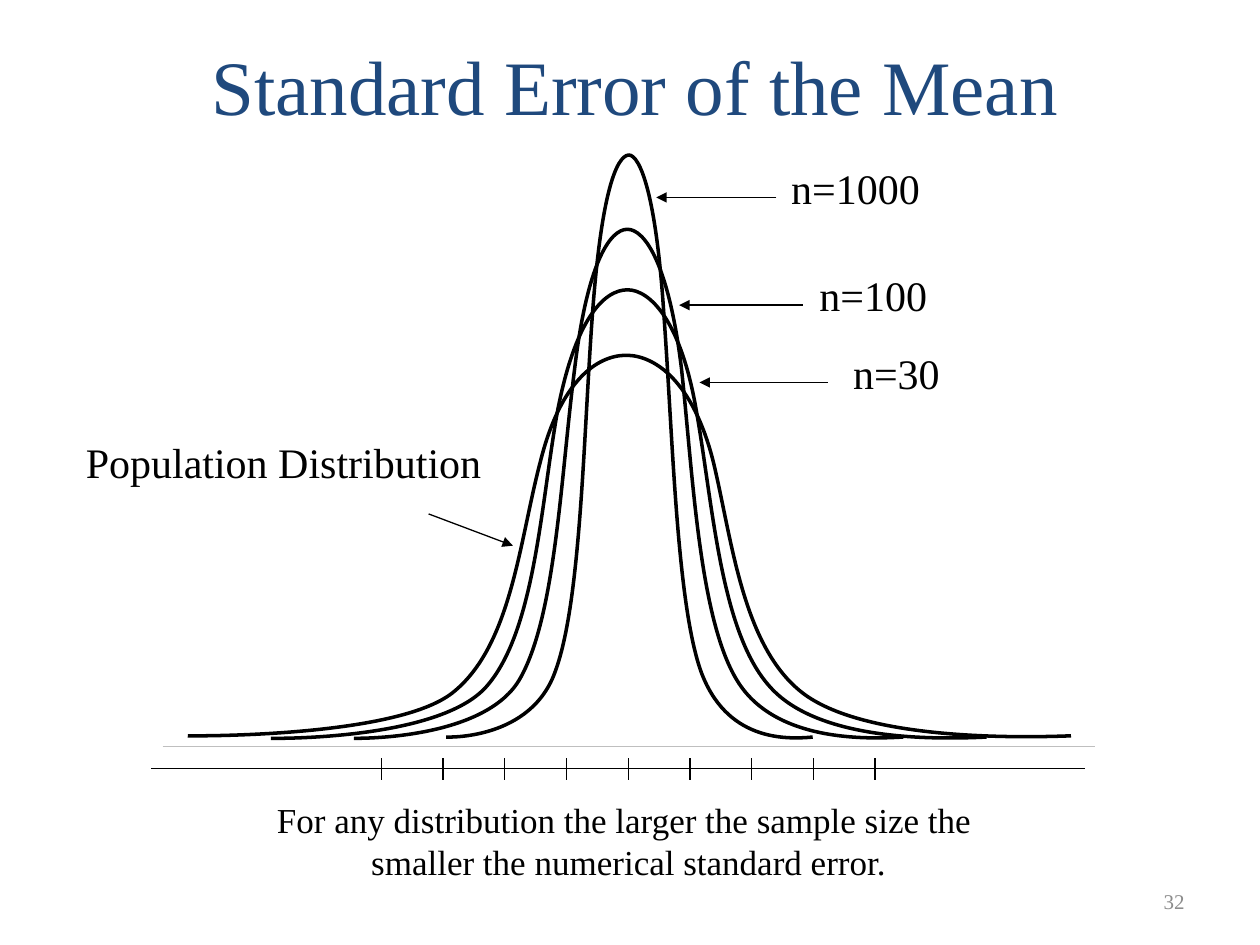
from lxml.etree import SubElement
from pptx import Presentation
from pptx.dml.color import RGBColor
from pptx.enum.text import MSO_ANCHOR, MSO_AUTO_SIZE, PP_ALIGN
from pptx.oxml.ns import qn
from pptx.util import Cm, Pt

BLACK = RGBColor(0x00, 0x00, 0x00)
NAVY = RGBColor(0x1F, 0x49, 0x7D)
SILVER = RGBColor(0xBF, 0xBF, 0xBF)
GRAY = RGBColor(0x8C, 0x8C, 0x8C)
FONT = "Times New Roman"

CURVE_UNIT = Cm(0.0254)
POPULATION_CURVE = [
    (850, 584), (798, 586), (684, 586), (637, 550), (589, 513), (581, 428), (566, 366),
    (550, 303), (520, 282), (497, 282), (474, 282), (445, 302), (429, 366),
    (412, 430), (406, 513), (359, 550), (313, 586), (149, 584), (149, 584)]
N_30_CURVE = [
    (783, 585), (741, 587), (649, 588), (611, 545), (572, 502), (566, 402), (553, 328),
    (541, 255), (516, 230), (498, 230), (479, 230), (456, 254), (442, 329),
    (429, 404), (424, 502), (386, 545), (348, 588), (215, 586), (215, 586)]
N_100_CURVE = [
    (717, 585), (685, 587), (614, 588), (585, 540), (555, 491), (550, 377), (541, 293),
    (531, 210), (512, 182), (498, 182), (484, 182), (466, 209), (456, 294),
    (445, 380), (441, 491), (412, 540), (383, 588), (281, 586), (281, 586)]
N_1000_CURVE = [
    (645, 585), (623, 587), (576, 588), (556, 532), (537, 477), (534, 347), (527, 251),
    (521, 155), (508, 123), (499, 123), (489, 124), (477, 154), (470, 252),
    (463, 349), (461, 477), (441, 532), (422, 588), (354, 585), (354, 585)]

LABELS = [
    ("Population Distribution", (1.48, 8.68, 8.48, 1.27), PP_ALIGN.LEFT),
    ("n=30", (16.94, 6.88, 2.26, 1.27), PP_ALIGN.CENTER),
    ("n=100", (16.27, 5.31, 2.69, 1.27), PP_ALIGN.LEFT),
    ("n=1000", (15.7, 3.15, 3.1, 1.27), PP_ALIGN.LEFT),
]
ARROWS = [
    ((8.64, 10.36), (10.34, 11.0)),
    ((16.69, 7.71), (14.1, 7.71)),
    ((16.18, 6.15), (13.69, 6.15)),
    ((15.65, 3.98), (13.23, 3.98)),
]

AXIS_Y = 15.49
TICK_TOP, TICK_BOTTOM = 15.29, 15.72
TICK_FIRST, TICK_LAST, TICK_COUNT = 7.69, 17.64, 9


def write_text(shape, text, *, size=24, color=BLACK, align=PP_ALIGN.LEFT,
               anchor=MSO_ANCHOR.TOP, wrap=True, auto_size=MSO_AUTO_SIZE.NONE):
    """Put formatted text into a shape."""
    frame = shape.text_frame
    frame.word_wrap = wrap
    frame.auto_size = auto_size
    frame.vertical_anchor = anchor
    paragraph = frame.paragraphs[0]
    paragraph.text = text
    paragraph.alignment = align
    for run in paragraph.runs:
        run.font.name = FONT
        run.font.size = Pt(size)
        run.font.color.rgb = color


def add_text(slide, text, box, **text_format):
    """Add a text box at left, top, width and height in centimetres."""
    shape = slide.shapes.add_textbox(*map(Cm, box))
    write_text(shape, text, **text_format)


def add_title(slide, text):
    """Place and format the title placeholder."""
    title = slide.shapes.title
    title.left, title.top, title.width, title.height = map(Cm, (1.05, 0.64, 23.5, 3.18))
    write_text(title, text, size=44, color=NAVY, align=PP_ALIGN.CENTER)


def add_line(slide, start, end, color=BLACK, width=0.75, arrow=False):
    """Add a straight line, with an optional arrowhead at its end."""
    connector = slide.shapes.add_connector(1, *map(Cm, (*start, *end)))
    connector.line.color.rgb = color
    connector.line.width = Pt(width)
    properties = connector._element.spPr
    if arrow:
        SubElement(properties.find(qn("a:ln")), qn("a:tailEnd"), type="triangle")
    SubElement(properties, qn("a:effectLst"))


def add_curve(slide, points):
    """Add an open curve from a start point and triples of Bézier points."""
    builder = slide.shapes.build_freeform(*points[0], scale=CURVE_UNIT)
    builder.add_line_segments(points[1:], close=False)
    shape = builder.convert_to_shape()
    shape.shadow.inherit = False
    shape.fill.background()
    shape.line.color.rgb = BLACK
    shape.line.width = Pt(2)
    path = next(shape._element.iter(qn("a:path")))
    segments = path.findall(qn("a:lnTo"))
    for index in range(0, len(segments), 3):
        bezier = SubElement(path, qn("a:cubicBezTo"))
        for segment in segments[index:index + 3]:
            bezier.append(segment[0])
            path.remove(segment)


def add_axis(slide):
    """Add the horizontal axis with evenly spaced ticks."""
    add_line(slide, (3.05, AXIS_Y), (21.87, AXIS_Y))
    step = (TICK_LAST - TICK_FIRST) / (TICK_COUNT - 1)
    for index in range(TICK_COUNT):
        x = TICK_FIRST + index * step
        add_line(slide, (x, TICK_TOP), (x, TICK_BOTTOM))


def main():
    """Build and save the presentation."""
    presentation = Presentation()
    presentation.slide_width, presentation.slide_height = Cm(25.4), Cm(19.05)
    slide = presentation.slides.add_slide(presentation.slide_layouts[5])

    add_title(slide, "Standard Error of the Mean")
    add_line(slide, (3.28, 15.05), (22.07, 15.05), color=SILVER, width=1)
    for points in (POPULATION_CURVE, N_30_CURVE, N_100_CURVE, N_1000_CURVE):
        add_curve(slide, points)
    for text, box, align in LABELS:
        add_text(slide, text, box, align=align, wrap=False,
                 auto_size=MSO_AUTO_SIZE.SHAPE_TO_FIT_TEXT)
    for start, end in ARROWS:
        add_line(slide, start, end, arrow=True)
    add_text(slide, "For any distribution the larger the sample size the \v"
             "smaller the numerical standard error.", (0.9, 15.98, 23.55, 1.96),
             size=20, align=PP_ALIGN.CENTER, auto_size=MSO_AUTO_SIZE.SHAPE_TO_FIT_TEXT)
    add_axis(slide)
    add_text(slide, "32", (18.21, 17.65, 5.92, 1.02), size=12, color=GRAY,
             align=PP_ALIGN.RIGHT, anchor=MSO_ANCHOR.MIDDLE)

    presentation.save("out.pptx")


if __name__ == "__main__":
    main()
